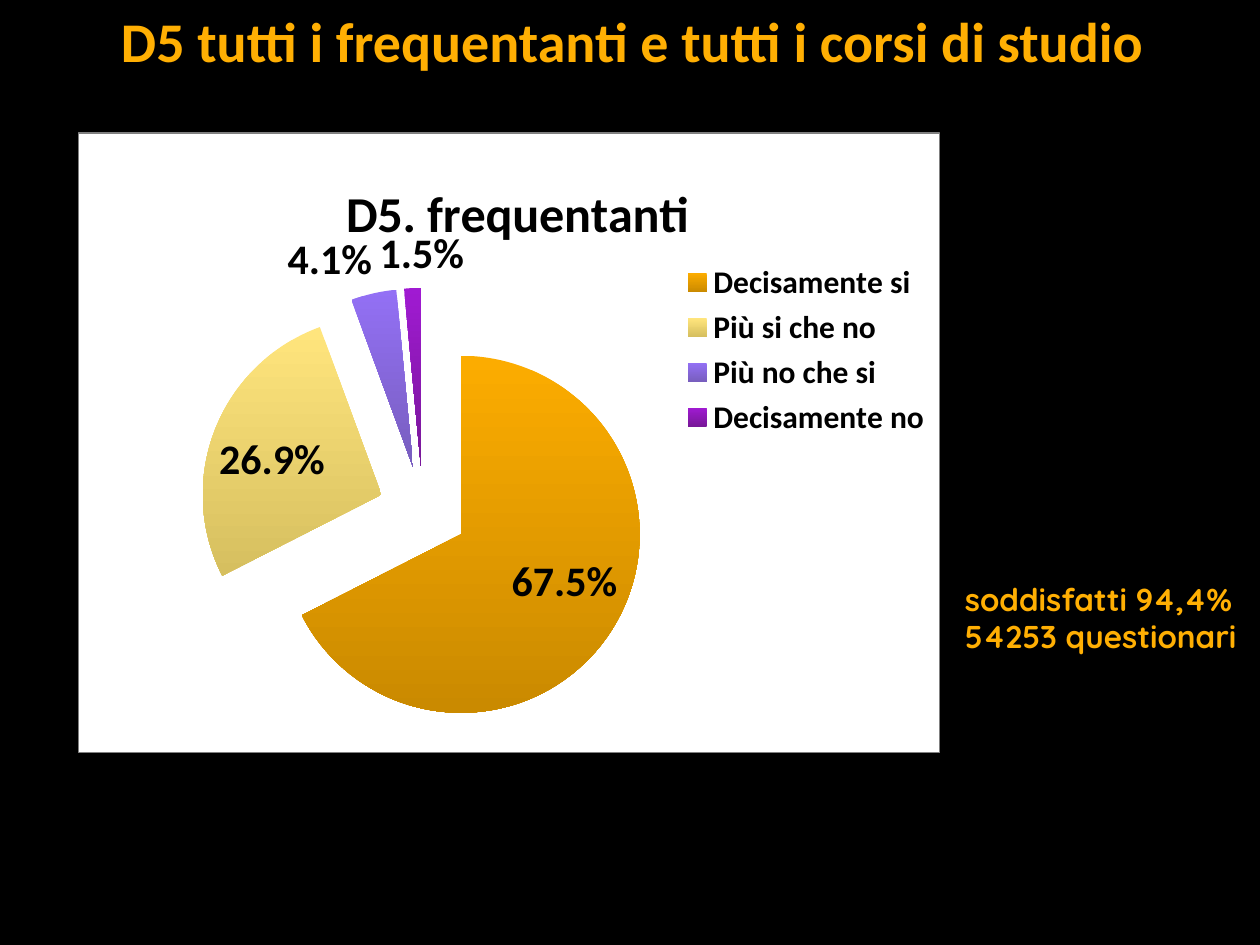
from lxml import etree
from pptx import Presentation
from pptx.chart.data import CategoryChartData
from pptx.dml.color import RGBColor
from pptx.enum.chart import XL_CHART_TYPE, XL_LABEL_POSITION, XL_LEGEND_POSITION
from pptx.enum.text import MSO_ANCHOR, PP_ALIGN
from pptx.oxml import parse_xml
from pptx.oxml.ns import nsdecls, qn
from pptx.util import Inches, Pt

PIE = XL_CHART_TYPE.PIE
BEST = XL_LABEL_POSITION.BEST_FIT
RIGHT = XL_LEGEND_POSITION.RIGHT
TOP = MSO_ANCHOR.TOP
CENTER = PP_ALIGN.CENTER
LEFT = PP_ALIGN.LEFT

BLACK = RGBColor(0x00, 0x00, 0x00)
GOLD = RGBColor(0xFF, 0xAF, 0x03)

SLICES = [
    ("Decisamente si", 0.675, RGBColor(0xFC, 0xAC, 0x00), RGBColor(0xCA, 0x8A, 0x00)),
    ("Più si che no", 0.269, RGBColor(0xFF, 0xE5, 0x7D), RGBColor(0xD6, 0xBF, 0x5F)),
    ("Più no che si", 0.041, RGBColor(0x93, 0x70, 0xF5), RGBColor(0x78, 0x5E, 0xBE)),
    ("Decisamente no", 0.015, RGBColor(0xA0, 0x1A, 0xD2), RGBColor(0x78, 0x18, 0x98)),
]


def style(font, size, color=BLACK, face="Calibri"):
    font.name, font.size, font.bold = face, Pt(size), True
    font.color.rgb = color


def write(frame, text, size=18, color=GOLD, face="Calibri", align=LEFT):
    frame.word_wrap = True
    frame.vertical_anchor = TOP
    frame.text = text
    for para in frame.paragraphs:
        para.alignment = align
        for run in para.runs:
            style(run.font, size, color, face)


def place(host, prior, x, y, w=None, h=None, inner=False):
    old = host.find(qn("c:layout"))
    if old is not None:
        host.remove(old)
    layout = etree.Element(qn("c:layout"))
    manual = etree.SubElement(layout, qn("c:manualLayout"))
    pairs = [("layoutTarget", "inner")] if inner else []
    pairs += [("xMode", "edge"), ("yMode", "edge"), ("x", x), ("y", y)]
    if w:
        pairs += [("w", w), ("h", h)]
    for tag, val in pairs:
        etree.SubElement(manual, qn("c:" + tag)).set("val", str(val))
    if prior:
        host.find(qn(prior)).addnext(layout)
    else:
        host.insert(0, layout)


def add_pie(slide):
    data = CategoryChartData(number_format="####.0%")
    data.categories = [name for name, *_ in SLICES]
    data.add_series("Series 1", [value for _, value, *_ in SLICES])
    box = Inches(0.62), Inches(1.05), Inches(6.84), Inches(4.93)
    chart = slide.shapes.add_chart(PIE, *box, data).chart
    style(chart.font, 24)

    chart.has_title = True
    write(chart.chart_title.text_frame, "D5. frequentanti", 28.8, BLACK, align=CENTER)
    chart.has_legend = True
    chart.legend.position = RIGHT
    chart.legend.include_in_layout = False
    style(chart.legend.font, 18)

    plot = chart.plots[0]
    plot.vary_by_categories = True
    series = plot.series[0]
    labels = series.data_labels
    labels.show_value = True
    labels.show_percentage = False
    labels.number_format = "####.0%"
    labels.number_format_is_linked = False
    labels.position = BEST
    style(labels.font, 24)
    for i, (_, _, light, dark) in enumerate(SLICES):
        fill = series.points[i].format.fill
        fill.gradient()
        fill.gradient_angle = 270
        for stop, color in zip(fill.gradient_stops, (light, dark)):
            stop.color.rgb = color

    root = chart.element.find(qn("c:chart"))
    place(root.find(qn("c:title")), "c:tx", 0.3, 0.06)
    place(root.find(qn("c:legend")), "c:legendPos", 0.7, 0.2, 0.29, 0.3)
    place(root.find(qn("c:plotArea")), None, 0.08, 0.25, 0.64, 0.72, inner=True)
    burst = etree.Element(qn("c:explosion"), val="25")
    series.format.element.find(qn("c:tx")).addnext(burst) if hasattr(
        series.format, "element") else root.find(".//" + qn("c:ser")).find(
        qn("c:tx")).addnext(burst)
    root.addnext(parse_xml(
        f'<c:spPr {nsdecls("c", "a")}>'
        '<a:solidFill><a:srgbClr val="FFFFFF"/></a:solidFill>'
        '<a:ln w="9525"><a:solidFill><a:srgbClr val="808080"/></a:solidFill></a:ln>'
        '</c:spPr>'))


def main():
    deck = Presentation()
    deck.slide_width, deck.slide_height = Inches(10), Inches(7.5)
    slide = deck.slides.add_slide(deck.slide_layouts[5])
    back = slide.background.fill
    back.solid()
    back.fore_color.rgb = BLACK

    title = slide.shapes.title
    title.left, title.top = Inches(0.69), Inches(0)
    title.width, title.height = Inches(8.66), Inches(0.86)
    write(title.text_frame, "D5 tutti i frequentanti e tutti i corsi di studio", 32, align=CENTER)

    add_pie(slide)
    note = slide.shapes.add_textbox(Inches(7.56), Inches(4.55), Inches(2.44), Inches(0.71))
    write(note.text_frame, "soddisfatti 94,4%\n54253 questionari", face="Quicksand")
    deck.save("out.pptx")


if __name__ == "__main__":
    main()
